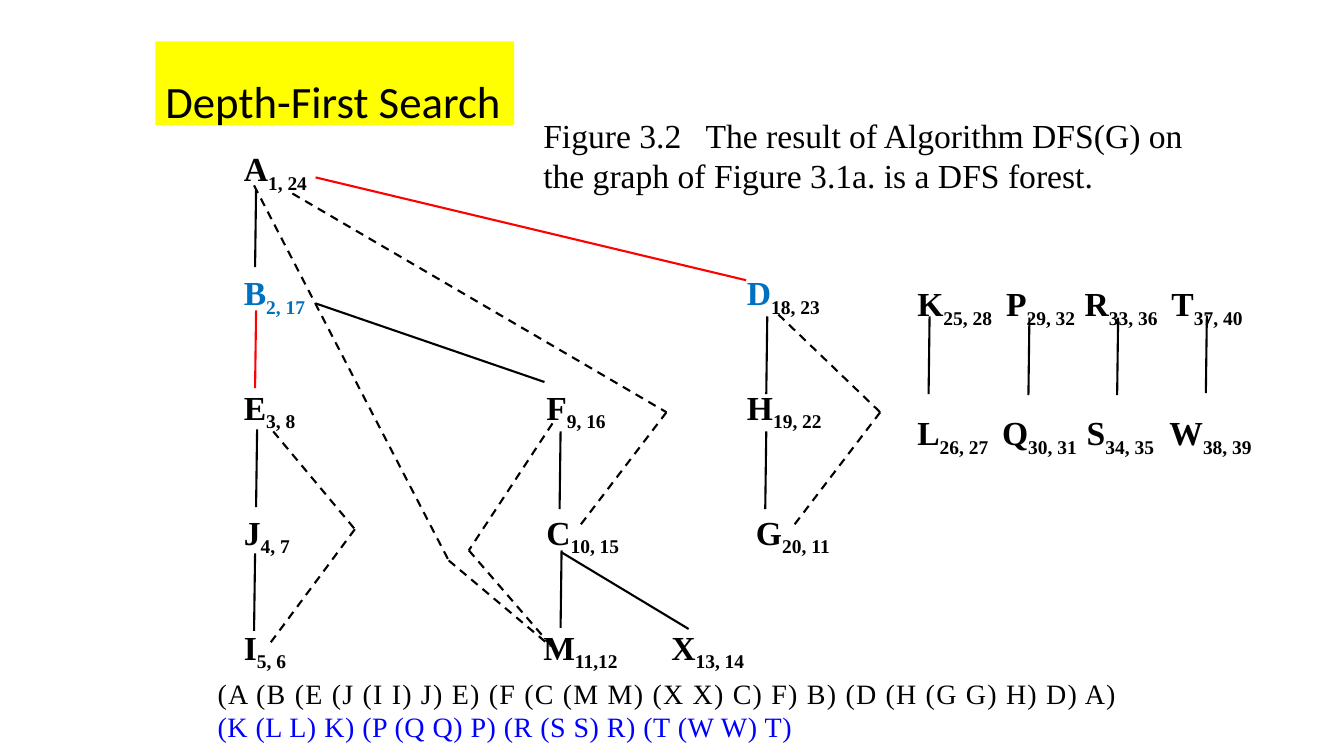
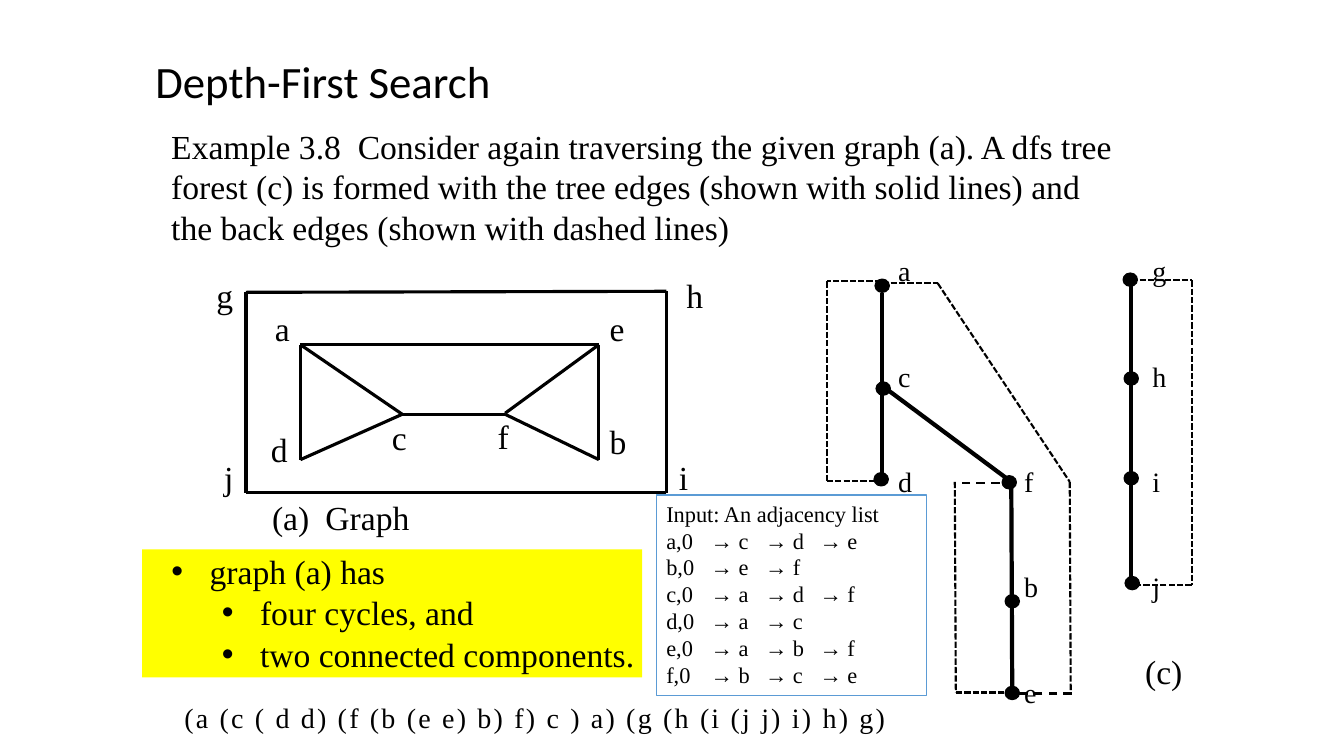
from itertools import pairwise

from lxml.etree import SubElement
from pptx import Presentation
from pptx.dml.color import RGBColor
from pptx.enum.dml import MSO_LINE
from pptx.enum.shapes import MSO_CONNECTOR, MSO_SHAPE
from pptx.enum.text import MSO_ANCHOR, MSO_AUTO_SIZE, PP_ALIGN
from pptx.oxml.ns import qn
from pptx.util import Inches, Pt

BLACK, WHITE, RED, BLUE = "000000", "FFFFFF", "FF0000", "0000FF"
YELLOW, NODE_BLUE, BORDER = "FFFF00", "0070C0", "5B9BD5"
SERIF, TITLE_FONT = "Times New Roman", "Calibri"
DASH, FINE_DASH = MSO_LINE.DASH, MSO_LINE.SQUARE_DOT
TITLE = "Depth-First Search"

# Slide 1: the forest, as (row top, [(left, letter, times, letter colour, times colour)])
FIGURE_TEXT = "Figure 3.2\tThe result of Algorithm DFS(G) on the graph of Figure 3.1a. is a DFS forest."
FOREST = [
    (1.42, [(2.32, "A", "1, 24")]),
    (2.65, [(2.32, "B", "2, 17", NODE_BLUE, NODE_BLUE), (7.31, "D", "18, 23", NODE_BLUE)]),
    (3.79, [(2.32, "E", "3, 8"), (5.32, "F", "9, 16"), (7.31, "H", "19, 22")]),
    (5.03, [(2.32, "J", "4, 7"), (5.32, "C", "10, 15"), (7.4, "G", "20, 11")]),
    (6.17, [(2.32, "I", "5, 6"), (5.29, "M", "11,12"), (6.56, "X", "13, 14")]),
    (2.76, [(9, "K", "25, 28"), (9.88, "P", "29, 32"), (10.66, "R", "33, 36"), (11.52, "T", "37, 40")]),
    (4.04, [(9, "L", "26, 27"), (9.84, "Q", "30, 31"), (10.68, "S", "34, 35"), (11.5, "W", "38, 39")]),
]
DROP = 0.77
DROPS = [
    (2.54, 1.88), (2.55, 4.26), (2.53, 5.49), (5.56, 4.28), (5.57, 5.46), (7.6, 4.28),
    (7.61, 3.14), (9.22, 3.14), (10.21, 3.15), (11.09, 3.15), (11.97, 3.13),
]
RED_DROP = (2.54, 3.08)
SLANTED_EDGES = [
    ([(3.13, 3.01), (5.4, 3.79)], BLACK),
    ([(5.57, 5.48), (6.83, 6.24)], BLACK),
    ([(3.13, 1.76), (7.4, 2.78)], RED),
]
BACK_EDGES = [
    [(2.71, 4.28), (3.52, 5.25), (2.65, 6.42)],
    [(2.9, 1.92), (6.61, 4.09), (5.74, 5.23)],
    [(7.72, 3.12), (8.73, 4.09), (7.86, 5.23)],
    [(5.48, 4.2), (4.65, 5.46), (5.47, 6.41)],
    [(2.52, 1.84), (4.45, 5.56), (5.46, 6.41)],
]
# (text, colour, letter spacing in points)
FOREST_BRACKETS = [
    ("(A (B (E (J (I I) J) E) (F (C (M M) (X X) C) F) B) (D (H (G G) H) D) A)", BLACK, 0.85),
    ("(K (L L) K) (P (Q Q) P) (R (S S) R) (T (W W) T)", BLUE, 0.33),
]

# Slide 2
EXAMPLE = ("Example 3.8\tConsider again traversing the given graph (a). A dfs tree forest (c) is formed "
           "with the tree edges (shown with solid lines) and the back edges (shown with dashed lines)")
GRAPH_LABELS = {
    "g": (1.97, 2.68), "h": (6.63, 2.68), "j": (2.01, 4.48), "i": (6.52, 4.48),
    "a": (2.54, 3.01), "d": (2.51, 4.21), "c": (3.7, 4.09),
    "f": (4.73, 4.08), "e": (5.86, 3.01), "b": (5.87, 4.13),
}
GRAPH_EDGES = [
    [(2.44, 2.9), (6.61, 2.89), (6.61, 4.89), (2.44, 4.89), (2.44, 2.9)],
    [(2.98, 3.42), (5.94, 3.42), (5.94, 4.56), (5.01, 4.11), (3.99, 4.11), (2.98, 4.56), (2.98, 3.42)],
    [(2.98, 3.42), (3.99, 4.11)],
    [(5.01, 4.1), (5.94, 3.42)],
]
TREE_ROW_TOP, TREE_ROW = 2.47, 1.045
TREE_LABELS = [  # (left, first row, letters going down)
    (8.81, 0, "acd"), (10.06, 2, "fbe"), (11.33, 0, "ghij"),
]
TREE_EDGES = [
    [(8.75, 2.91), (8.75, 4.75)],
    [(8.74, 3.82), (10.03, 4.78), (10.04, 6.89)],
    [(11.22, 2.81), (11.22, 5.74)],
]
TREE_BACK_EDGES = [
    ([(8.74, 2.79), (8.2, 2.79), (8.2, 4.77), (8.79, 4.77)], FINE_DASH),
    ([(8.75, 2.81), (9.3, 2.81), (10.61, 4.78), (10.62, 6.88)], FINE_DASH),
    ([(10.63, 6.88), (10.04, 6.88)], DASH),
    ([(10.06, 4.79), (9.47, 4.79)], DASH),
    ([(9.47, 4.78), (9.48, 6.87), (10.08, 6.87)], FINE_DASH),
    ([(11.22, 2.78), (11.82, 2.78), (11.82, 5.8), (11.23, 5.8)], FINE_DASH),
]
DOT_W, DOT_H = 0.14, 0.13
TREE_DOTS = [
    (8.68, 2.77), (8.69, 3.79), (8.67, 4.69), (9.94, 4.72), (9.97, 5.9), (9.97, 6.81),
    (11.14, 2.71), (11.15, 3.69), (11.15, 4.68), (11.16, 5.72),
]
GRAPH_FACTS = [("graph (a) has", 0), ("four cycles, and", 1), ("two connected components.", 1)]
NEIGHBOURS = {"a": "cde", "b": "ef", "c": "adf", "d": "ac", "e": "abf", "f": "bce"}
TREE_BRACKETS = [
    ("(a (c ( d d) (f (b (e e) b) f) c ) a) (g (h (i (j j) i) h) g)", BLACK, 1.55),
]


def rgb(colour):
    return RGBColor.from_string(colour)


def add_run(paragraph, text, size=24, colour=BLACK, bold=False, font=SERIF):
    run = paragraph.add_run()
    run.text = text
    run.font.size = Pt(size)
    run.font.name = font
    run.font.bold = bold
    run.font.color.rgb = rgb(colour)
    return run


def next_paragraph(frame, index):
    return frame.add_paragraph() if index else frame.paragraphs[0]


def set_tabs(paragraph, *stops):
    tab_list = SubElement(paragraph._p.get_or_add_pPr(), qn("a:tabLst"))
    for stop in stops:
        SubElement(tab_list, qn("a:tab"), pos=str(Inches(stop)), algn="l")


def add_frame(slide, left, top, width, height=0.5):
    frame = slide.shapes.add_textbox(*map(Inches, (left, top, width, height))).text_frame
    frame.word_wrap = True
    return frame


def add_label(slide, text, left, top, width=0.52, size=24, align=PP_ALIGN.LEFT, tab=None):
    paragraph = add_frame(slide, left, top, width).paragraphs[0]
    paragraph.alignment = align
    if tab:
        set_tabs(paragraph, tab)
    add_run(paragraph, text, size)


def add_panel(slide, kind, box, fill, outline=None):
    panel = slide.shapes.add_shape(kind, *map(Inches, box))
    panel.shadow.inherit = False
    panel.fill.solid()
    panel.fill.fore_color.rgb = rgb(fill)
    if outline:
        panel.line.color.rgb = rgb(outline)
        panel.line.width = Pt(1)
    else:
        panel.line.fill.background()
    frame = panel.text_frame
    frame.word_wrap = True
    frame.vertical_anchor = MSO_ANCHOR.TOP
    return frame


def add_path(slide, points, weight=1.5, colour=BLACK, dash=None):
    """Join successive points with straight connectors."""
    for start, end in pairwise(points):
        edge = slide.shapes.add_connector(MSO_CONNECTOR.STRAIGHT, *map(Inches, (*start, *end)))
        edge.line.color.rgb = rgb(colour)
        edge.line.width = Pt(weight)
        if dash:
            edge.line.dash_style = dash
        SubElement(edge._element.spPr, qn("a:effectLst"))


def add_brackets(slide, lines, left, top, width, height):
    frame = add_frame(slide, left, top, width, height)
    for index, (text, colour, spacing) in enumerate(lines):
        run = add_run(next_paragraph(frame, index), text, 20, colour)
        run.font._element.set("spc", str(round(spacing * 100)))


def add_titled_slide(deck, left, top, fill=None):
    slide = deck.slides.add_slide(deck.slide_layouts[5])
    title = slide.shapes.title
    title.left, title.top, title.width, title.height = map(Inches, (left, top, 3.56, 0.83))
    if fill:
        title.fill.solid()
        title.fill.fore_color.rgb = rgb(fill)
    frame = title.text_frame
    frame.word_wrap = True
    frame.auto_size = MSO_AUTO_SIZE.NONE
    frame.vertical_anchor = MSO_ANCHOR.TOP
    heading = frame.paragraphs[0]
    heading.alignment = PP_ALIGN.LEFT
    heading.line_spacing = 1.5
    add_run(heading, TITLE, 32, font=TITLE_FONT)
    return slide


def build_forest_slide(deck):
    slide = add_titled_slide(deck, 1.54, 0.41, YELLOW)
    add_label(slide, FIGURE_TEXT, 5.29, 1.09, 6.82, tab=1.61)
    for top, nodes in FOREST:
        for left, letter, times, *colours in nodes:
            letter_colour, times_colour = (colours + [BLACK, BLACK])[:2]
            node = add_frame(slide, left, top, 1.2).paragraphs[0]
            add_run(node, letter, colour=letter_colour, bold=True)
            subscript = add_run(node, times, colour=times_colour, bold=True)
            subscript.font._element.set("baseline", "-25000")
    for x, y in DROPS + [RED_DROP]:
        colour = RED if (x, y) == RED_DROP else BLACK
        add_path(slide, [(x, y), (x - 0.01, y + DROP)], colour=colour)
    for points, colour in SLANTED_EDGES:
        add_path(slide, points, colour=colour)
    for points in BACK_EDGES:
        add_path(slide, points, dash=DASH)
    add_brackets(slide, FOREST_BRACKETS, 2.06, 6.66, 9.56, 0.77)


def add_graph_facts(slide):
    frame = add_panel(slide, MSO_SHAPE.RECTANGLE, (1.41, 5.45, 4.96, 1.27), YELLOW)
    frame.margin_left = Inches(0.29)
    frame.margin_top = frame.margin_right = frame.margin_bottom = 0
    for index, (text, level) in enumerate(GRAPH_FACTS):
        fact = next_paragraph(frame, index)
        fact.alignment = PP_ALIGN.LEFT
        fact.level = level
        fact.line_spacing = 1.03
        properties = fact._p.get_or_add_pPr()
        properties.set("marL", str(Inches(0.38 + 0.5 * level)))
        properties.set("indent", str(Inches(-0.38)))
        SubElement(properties, qn("a:buFont"), typeface="Arial")
        SubElement(properties, qn("a:buChar"), char="•")
        add_run(fact, text)


def add_adjacency_list(slide):
    frame = add_panel(slide, MSO_SHAPE.RECTANGLE, (6.51, 4.91, 2.68, 1.99), WHITE, BORDER)
    rows = ["\t".join([f"{vertex},0", *(f"→ {other}" for other in others)])
            for vertex, others in NEIGHBOURS.items()]
    for index, row in enumerate(["Input: An adjacency list", *rows]):
        paragraph = next_paragraph(frame, index)
        paragraph.alignment = PP_ALIGN.LEFT
        if index:
            set_tabs(paragraph, 0.44, 0.98, 1.52)
        add_run(paragraph, row, 16)


def build_example_slide(deck):
    slide = add_titled_slide(deck, 1.44, 0.22)
    add_label(slide, EXAMPLE, 1.6, 1.2, 9.62, tab=1.85)
    for points in GRAPH_EDGES:
        add_path(slide, points, 2.25)
    for letter, (left, top) in GRAPH_LABELS.items():
        add_label(slide, letter, left, top, align=PP_ALIGN.CENTER)
    add_label(slide, "(a)\tGraph", 2.6, 4.88, 2, tab=0.53)
    add_graph_facts(slide)

    for left, first_row, letters in TREE_LABELS:
        for row, letter in enumerate(letters, first_row):
            add_label(slide, letter, left, TREE_ROW_TOP + row * TREE_ROW, size=20)
    for points in TREE_EDGES:
        add_path(slide, points, 3)
    for points, dash in TREE_BACK_EDGES:
        add_path(slide, points, dash=dash)
    for left, top in TREE_DOTS:
        add_panel(slide, MSO_SHAPE.OVAL, (left, top, DOT_W, DOT_H), BLACK, BLACK)
    add_label(slide, "(c)", 11.26, 6.41, 0.74)
    add_adjacency_list(slide)
    add_brackets(slide, TREE_BRACKETS, 1.73, 6.9, 7.6, 0.45)


def main():
    deck = Presentation()
    deck.slide_width, deck.slide_height = Inches(13.33), Inches(7.5)
    build_forest_slide(deck)
    build_example_slide(deck)
    deck.save("out.pptx")


if __name__ == "__main__":
    main()
